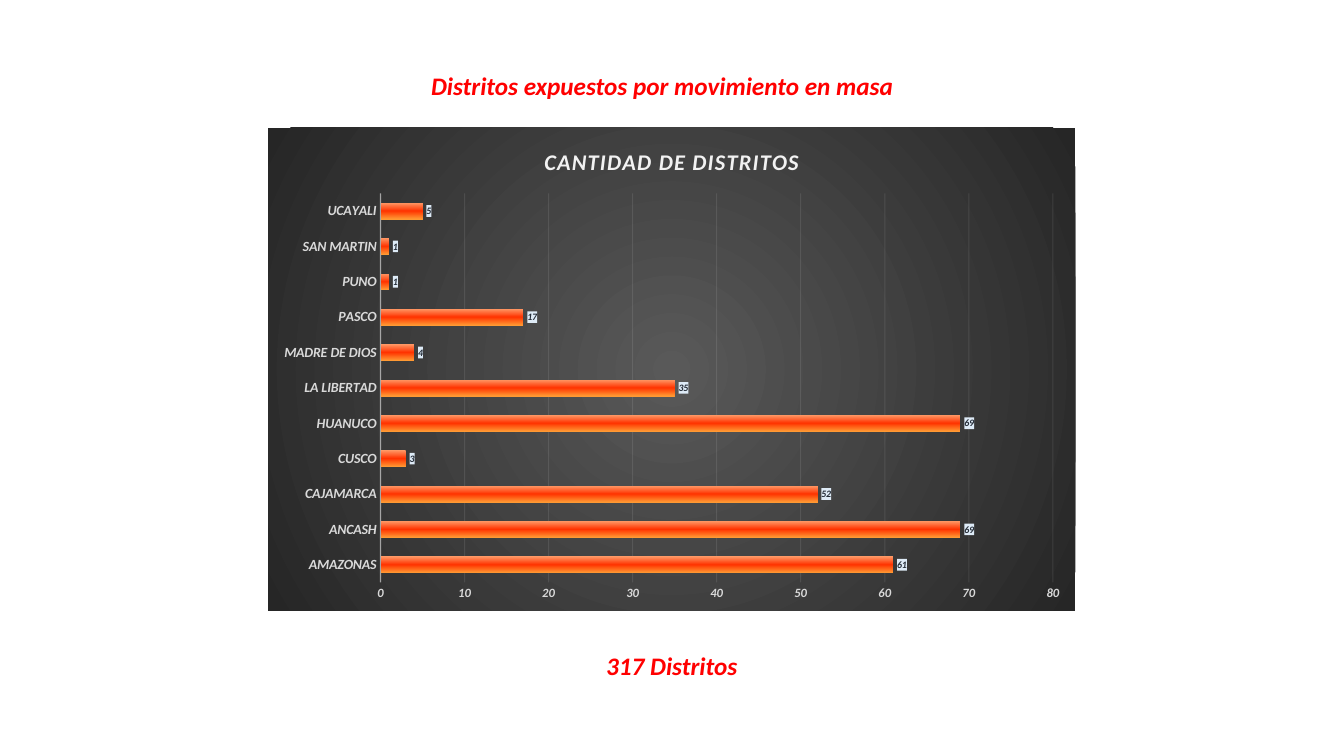
from pptx import Presentation
from pptx.chart import data as chart_data
from pptx.dml import color as dml
from pptx.enum import chart as kinds, text
from pptx.oxml import ns, parse_xml
from pptx.util import Pt

FONT = "Calibri"
TITLE = "CANTIDAD DE DISTRITOS"
DISTRICTS = {
    "AMAZONAS": 61, "ANCASH": 69, "CAJAMARCA": 52, "CUSCO": 3,
    "HUANUCO": 69, "LA LIBERTAD": 35, "MADRE DE DIOS": 4, "PASCO": 17,
    "PUNO": 1, "SAN MARTIN": 1, "UCAYALI": 5,
}


def rgb(value):
    """Return the colour for a hex string."""
    return dml.RGBColor.from_string(value)


def style_font(font, size, color):
    """Apply the bold italic face used across the slide."""
    font.name, font.size = FONT, Pt(size)
    font.bold = font.italic = True
    font.color.rgb = rgb(color)


def add_text(page, words, left, top, width, height, size=18, color="FF0000", wrap=True):
    """Add a centred line of text."""
    box = page.shapes.add_textbox(Pt(left), Pt(top), Pt(width), Pt(height))
    box.text_frame.word_wrap = wrap
    para = box.text_frame.paragraphs[0]
    para.alignment = text.PP_ALIGN.CENTER
    span = para.add_run()
    span.text = words
    style_font(span.font, size, color)


def gradient(stops, direction):
    """Return gradient markup for (percent, colour) stops."""
    marks = "".join(
        f'<a:gs pos="{place * 1000}"><a:srgbClr val="{color}"/></a:gs>' for place, color in stops)
    return f'<a:gradFill rotWithShape="1"><a:gsLst>{marks}</a:gsLst>{direction}</a:gradFill>'


def shape_format(fill):
    """Return a chart format element holding a fill and no line."""
    return parse_xml(f'<c:spPr {ns.nsdecls("c", "a")}>{fill}<a:ln><a:noFill/></a:ln></c:spPr>')


def style_line(chart, line, query, width, opacity):
    """Draw a translucent pale line and set its opacity in percent."""
    line.width = Pt(width)
    line.color.rgb = rgb("F2F2F2")
    for color in chart.element.xpath(query):
        color.append(parse_xml(f'<a:alpha {ns.nsdecls("a")} val="{opacity * 1000}"/>'))


def style_title(chart):
    """Write the spaced chart title."""
    chart.has_title = True
    span = chart.chart_title.text_frame.paragraphs[0].add_run()
    span.text = TITLE
    style_font(span.font, 16, "F2F2F2")
    chart.chart_title.include_in_layout = False
    chart.element.xpath(".//c:title//a:r/a:rPr")[0].set("spc", "100")


def style_axes(chart):
    """Set the fonts, lines and scale of both axes."""
    regions, counts = chart.category_axis, chart.value_axis
    for axis, size in ((regions, 10), (counts, 9)):
        axis.major_tick_mark = axis.minor_tick_mark = kinds.XL_TICK_MARK.NONE
        style_font(axis.tick_labels.font, size, "D9D9D9")
    style_line(chart, regions.format.line, ".//c:catAx/c:spPr//a:srgbClr", 1, 54)
    counts.minimum_scale, counts.maximum_scale, counts.major_unit = 0, 80, 10
    counts.tick_labels.number_format = "#,##0"
    counts.tick_labels.number_format_is_linked = False
    counts.format.line.fill.background()
    style_line(chart, counts.major_gridlines.format.line,
               ".//c:majorGridlines//a:srgbClr", 0.75, 10)


def style_bars(chart):
    """Set the bar spacing, gradient and value labels."""
    plot = chart.plots[0]
    plot.gap_width, plot.overlap, plot.vary_by_categories = 115, -20, False
    series = plot.series[0]
    series.invert_if_negative = False
    series.format.fill.background()
    bars = chart.element.xpath(".//c:ser/c:spPr")[0]
    bars.getparent().replace(bars, shape_format(gradient(
        [(0, "FF9966"), (50, "FF3300"), (100, "FF9933")], '<a:lin ang="5400000" scaled="0"/>')))
    labels = series.data_labels
    labels.show_value = True
    labels.position = kinds.XL_LABEL_POSITION.OUTSIDE_END
    labels.number_format, labels.number_format_is_linked = "#,##0", False
    style_font(labels.font, 7, "222A35")
    chart.element.xpath(".//c:ser/c:dLbls/c:txPr")[0].addprevious(
        shape_format('<a:solidFill><a:srgbClr val="DEEBF7"/></a:solidFill>'))


def add_bar_chart(page, left, top, width, height):
    """Add the chart of districts by region."""
    values = chart_data.CategoryChartData(number_format="#,##0")
    values.categories = list(DISTRICTS)
    values.add_series(TITLE, list(DISTRICTS.values()))
    chart = page.shapes.add_chart(
        kinds.XL_CHART_TYPE.BAR_CLUSTERED, Pt(left), Pt(top), Pt(width), Pt(height), values).chart
    chart.has_legend = False
    chart.font.name, chart.font.size = FONT, Pt(10)
    style_title(chart)
    style_axes(chart)
    style_bars(chart)
    center = '<a:path path="circle"><a:fillToRect l="50000" t="50000" r="50000" b="50000"/></a:path>'
    chart.element.xpath("./c:chart")[0].addnext(
        shape_format(gradient([(0, "595959"), (100, "262626")], center)))


def main():
    """Build and save the slide."""
    deck = Presentation()
    deck.slide_width, deck.slide_height = Pt(960), Pt(540)
    page = deck.slides.add_slide(deck.slide_layouts[6])
    add_text(page, "Distritos expuestos por movimiento en masa", 298.8, 46.8, 348.5, 29, wrap=False)
    add_text(page, "317 Distritos", 419.8, 460.8, 120.2, 29)
    add_bar_chart(page, 191.5, 91.4, 576.7, 344.9)
    deck.save("out.pptx")


if __name__ == "__main__":
    main()
